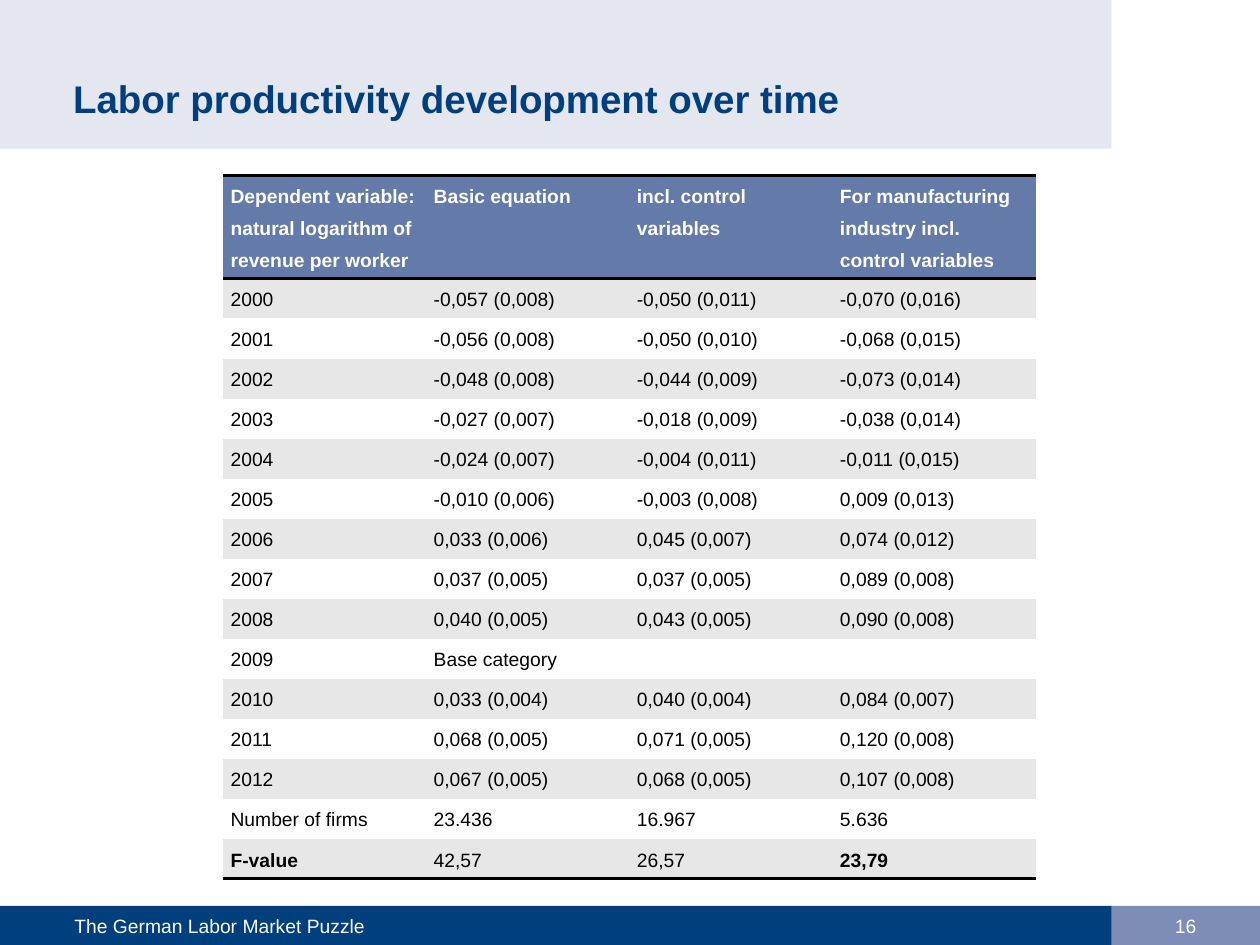
from lxml.etree import SubElement
from pptx import Presentation
from pptx.dml.color import RGBColor
from pptx.enum.shapes import MSO_SHAPE
from pptx.enum.text import MSO_ANCHOR, MSO_AUTO_SIZE, PP_ALIGN
from pptx.oxml import parse_xml
from pptx.oxml.ns import nsdecls, qn
from pptx.util import Inches, Pt

NAVY = RGBColor(0x00, 0x3F, 0x7D)
LAVENDER = RGBColor(0x7D, 0x8D, 0xB7)
PALE = RGBColor(0xE4, 0xE6, 0xF0)
HEADER_BLUE = RGBColor(0x64, 0x7A, 0xA9)
BAND_GREY = RGBColor(0xE7, 0xE7, 0xE7)
WHITE = RGBColor(0xFF, 0xFF, 0xFF)
BLACK = RGBColor(0x00, 0x00, 0x00)
NO_STYLE_NO_GRID = "{2D5ABB26-0587-4C30-8999-92F81FD0307C}"

ROWS = [
    ("Dependent variable: natural logarithm of revenue per worker", "Basic equation",
     "incl. control variables", "For manufacturing industry incl. control variables"),
    ("2000", "-0,057 (0,008)", "-0,050 (0,011)", "-0,070 (0,016)"),
    ("2001", "-0,056 (0,008)", "-0,050 (0,010)", "-0,068 (0,015)"),
    ("2002", "-0,048 (0,008)", "-0,044 (0,009)", "-0,073 (0,014)"),
    ("2003", "-0,027 (0,007)", "-0,018 (0,009)", "-0,038 (0,014)"),
    ("2004", "-0,024 (0,007)", "-0,004 (0,011)", "-0,011 (0,015)"),
    ("2005", "-0,010 (0,006)", "-0,003 (0,008)", "0,009 (0,013)"),
    ("2006", "0,033 (0,006)", "0,045 (0,007)", "0,074 (0,012)"),
    ("2007", "0,037 (0,005)", "0,037 (0,005)", "0,089 (0,008)"),
    ("2008", "0,040 (0,005)", "0,043 (0,005)", "0,090 (0,008)"),
    ("2009", "Base category", "", ""),
    ("2010", "0,033 (0,004)", "0,040 (0,004)", "0,084 (0,007)"),
    ("2011", "0,068 (0,005)", "0,071 (0,005)", "0,120 (0,008)"),
    ("2012", "0,067 (0,005)", "0,068 (0,005)", "0,107 (0,008)"),
    ("Number of firms", "23.436", "16.967", "5.636"),
    ("F-value", "42,57", "26,57", "23,79"),
]
LAST = len(ROWS) - 1
BOLD_CELLS = {(LAST, 0), (LAST, 3)}


def format_runs(p, size, color, bold=False):
    for r in p.runs:
        r.font.name = "Arial"
        r.font.size = Pt(size)
        r.font.bold = bold
        r.font.color.rgb = color


def add_rules(cell, tags):
    """Draw black 2 pt cell borders; tags are in schema order (lnT, lnB)."""
    tc_pr = cell._tc.get_or_add_tcPr()
    for i, tag in enumerate(tags):
        tc_pr.insert(i, parse_xml(
            f'<a:{tag} {nsdecls("a")} w="{Pt(2)}"><a:solidFill>'
            f'<a:srgbClr val="{BLACK}"/></a:solidFill></a:{tag}>'))


prs = Presentation()
prs.slide_width, prs.slide_height = Inches(10), Inches(7.5)
s = prs.slides.add_slide(prs.slide_layouts[5])

# Title band
title = s.shapes.title
title.left, title.top = Inches(-0.01), Inches(0)
title.width, title.height = Inches(8.83), Inches(1.18)
title.fill.solid()
title.fill.fore_color.rgb = PALE
tf = title.text_frame
tf.text = "Labor productivity development over time"
tf.word_wrap = True
tf.auto_size = MSO_AUTO_SIZE.NONE
tf.vertical_anchor = MSO_ANCHOR.BOTTOM
tf.margin_left, tf.margin_right = Inches(0.59), Inches(0.39)
tf.margin_top, tf.margin_bottom = Inches(0.12), Inches(0.22)
tf.paragraphs[0].alignment = PP_ALIGN.LEFT
format_runs(tf.paragraphs[0], 22, NAVY, bold=True)

# Footer: text bar and page number
for text, left, width, fill, align, margins in [
    ("The German Labor Market Puzzle", 0, 8.83, NAVY, PP_ALIGN.LEFT, (0.59, 0.39)),
    ("16", 8.82, 1.18, LAVENDER, PP_ALIGN.CENTER, (0.1, 0.1)),
]:
    sp = s.shapes.add_shape(MSO_SHAPE.RECTANGLE, Inches(left), Inches(7.19),
                            Inches(width), Inches(0.31))
    sp.shadow.inherit = False
    sp.fill.solid()
    sp.fill.fore_color.rgb = fill
    sp.line.fill.background()
    tf = sp.text_frame
    tf.text = text
    tf.vertical_anchor = MSO_ANCHOR.MIDDLE
    tf.margin_left, tf.margin_right = map(Inches, margins)
    tf.paragraphs[0].alignment = align
    format_runs(tf.paragraphs[0], 11, WHITE)

# Regression table
frame = s.shapes.add_table(len(ROWS), 4, Inches(1.77), Inches(1.39),
                           Inches(6.45), Inches(5.59))
table = frame.table
table._tbl.tblPr.find(qn("a:tableStyleId")).text = NO_STYLE_NO_GRID
for column in table.columns:
    column.width = Inches(6.45 / 4)

for i, row in enumerate(ROWS):
    is_header = i == 0
    table.rows[i].height = Inches(0.82 if is_header else 4.77 / LAST)
    for j, text in enumerate(row):
        cell = table.cell(i, j)
        cell.margin_left = cell.margin_right = Inches(0.06)
        cell.margin_top = cell.margin_bottom = 0
        cell.fill.solid()
        cell.fill.fore_color.rgb = (
            HEADER_BLUE if is_header else BAND_GREY if i % 2 else WHITE)
        p = cell.text_frame.paragraphs[0]
        p.line_spacing = 1.5
        p.alignment = PP_ALIGN.LEFT if is_header else PP_ALIGN.JUSTIFY
        if text:
            p.text = text
            format_runs(p, 11, WHITE if is_header else BLACK,
                        bold=is_header or (i, j) in BOLD_CELLS)
        else:
            SubElement(p._p, qn("a:endParaRPr"), sz="1100")
        if is_header:
            add_rules(cell, ["lnT", "lnB"])
        elif i == LAST:
            add_rules(cell, ["lnB"])

prs.save("out.pptx")
